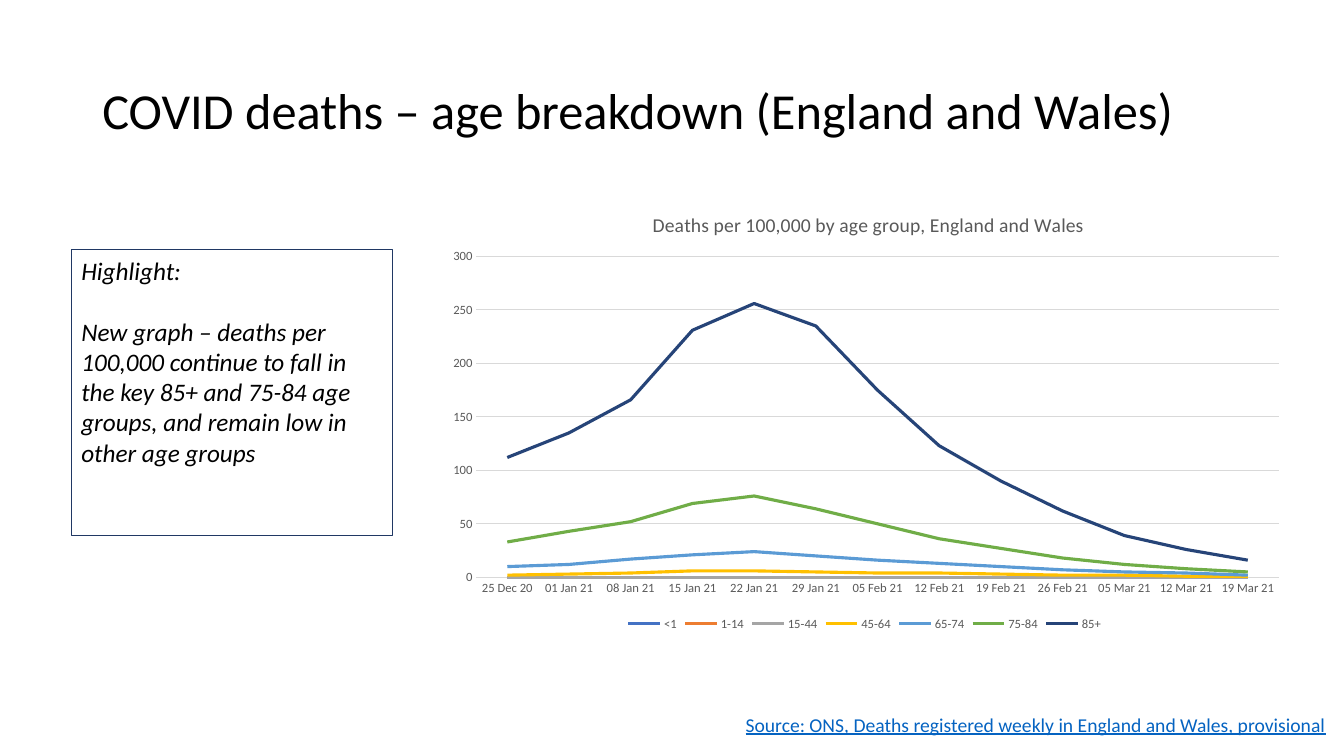
"""Build a slide on COVID deaths by age group with a line chart."""
from lxml import etree
from pptx import Presentation
from pptx import util as u
from pptx.chart.data import CategoryChartData
from pptx.dml.color import RGBColor
from pptx.enum import chart as ch, shapes, text
from pptx.oxml import parse_xml
from pptx.oxml.ns import nsdecls, qn

BLACK = RGBColor(0x00, 0x00, 0x00)
NAVY = RGBColor(0x20, 0x38, 0x64)
LINK = RGBColor(0x05, 0x63, 0xC1)
GREY = RGBColor(0x59, 0x59, 0x59)
PALE = RGBColor(0xD9, 0xD9, 0xD9)

WEEKS = ["25 Dec 20", "01 Jan 21", "08 Jan 21", "15 Jan 21", "22 Jan 21",
         "29 Jan 21", "05 Feb 21", "12 Feb 21", "19 Feb 21", "26 Feb 21",
         "05 Mar 21", "12 Mar 21", "19 Mar 21"]
AGE_GROUPS = [
    ("<1", RGBColor(0x44, 0x72, 0xC4), [0] * len(WEEKS)),
    ("1-14", RGBColor(0xED, 0x7D, 0x31), [0] * len(WEEKS)),
    ("15-44", RGBColor(0xA5, 0xA5, 0xA5), [0] * len(WEEKS)),
    ("45-64", RGBColor(0xFF, 0xC0, 0x00),
     [2, 3, 4, 6, 6, 5, 4, 4, 3, 2, 2, 1, 1]),
    ("65-74", RGBColor(0x5B, 0x9B, 0xD5),
     [10, 12, 17, 21, 24, 20, 16, 13, 10, 7, 5, 4, 2]),
    ("75-84", RGBColor(0x70, 0xAD, 0x47),
     [33, 43, 52, 69, 76, 64, 50, 36, 27, 18, 12, 8, 5]),
    ("85+", RGBColor(0x26, 0x44, 0x78),
     [112, 135, 166, 231, 256, 235, 175, 123, 90, 62, 39, 26, 16]),
]


class Deck:
    """Hold the style and the current slide."""

    def __init__(self, font="Calibri"):
        self.font = font
        self.prs = Presentation()
        self.prs.slide_width, self.prs.slide_height = u.Cm(33.87), u.Cm(19.05)
        self.s = self.prs.slides.add_slide(self.prs.slide_layouts[6])

    def style(self, font, size, color, italic=None, underline=None):
        """Set the look of a font."""
        font.name, font.size = self.font, u.Pt(size)
        font.color.rgb = color
        font.italic, font.underline = italic, underline

    def fill_text(self, tf, paragraphs, size, color, gap=0, wrap=True, **look):
        """Fill a text frame, with a gap between paragraphs."""
        tf.word_wrap = wrap
        for i, words in enumerate(paragraphs):
            p = tf.add_paragraph() if i else tf.paragraphs[0]
            p.text = words
            p.alignment = text.PP_ALIGN.LEFT
            if i:
                p.space_before = u.Pt(gap)
            self.style(p.font, size, color, **look)

    def label(self, words, box, size, color, **look):
        """Add a text box of one paragraph."""
        sp = self.s.shapes.add_textbox(*map(u.Cm, box))
        self.fill_text(sp.text_frame, [words], size, color, **look)
        return sp.text_frame

    def panel(self, paragraphs, box, size, line, gap):
        """Add an outlined box of italic text."""
        sp = self.s.shapes.add_shape(shapes.MSO_SHAPE.RECTANGLE, *map(u.Cm, box))
        sp.shadow.inherit = False
        sp.fill.background()
        sp.line.color.rgb, sp.line.width = line, u.Pt(0.75)
        sp.text_frame.vertical_anchor = text.MSO_ANCHOR.TOP
        self.fill_text(sp.text_frame, paragraphs, size, BLACK, gap=gap, italic=True)

    def place(self, element, index, **fractions):
        """Give a chart part a fixed place, as fractions of the chart."""
        for old in element.findall(qn("c:layout")):
            element.remove(old)
        layout = parse_xml(f"<c:layout {nsdecls('c')}><c:manualLayout/></c:layout>")
        if "w" in fractions:
            etree.SubElement(layout[0], qn("c:layoutTarget")).set("val", "inner")
        for side in "xy":
            etree.SubElement(layout[0], qn(f"c:{side}Mode")).set("val", "edge")
        for name, value in fractions.items():
            etree.SubElement(layout[0], qn(f"c:{name}")).set("val", str(value))
        element.insert(index, layout)

    def line_chart(self, title, cats, groups, box):
        """Add a line chart with a title and a legend below."""
        data = CategoryChartData()
        data.categories = cats
        for name, _, values in groups:
            data.add_series(name, values)
        chart = self.s.shapes.add_chart(
            ch.XL_CHART_TYPE.LINE, *map(u.Cm, box), data).chart
        self.style(chart.font, 10, BLACK)

        for series, (_, color, _) in zip(chart.plots[0].series, groups):
            series.smooth = False
            series.marker.style = ch.XL_MARKER_STYLE.NONE
            series.format.line.color.rgb = color
            series.format.line.width = u.Pt(2.25)
        chart.plots[0].vary_by_categories = False

        weeks, rates = chart.category_axis, chart.value_axis
        for axis in (weeks, rates):
            axis.major_tick_mark = axis.minor_tick_mark = ch.XL_TICK_MARK.NONE
            self.style(axis.tick_labels.font, 9, GREY)
        rates.minimum_scale, rates.maximum_scale, rates.major_unit = 0, 300, 50
        rates.format.line.fill.background()
        for line in (weeks.format.line, rates.major_gridlines.format.line):
            line.color.rgb, line.width = PALE, u.Pt(0.75)

        chart.has_legend = True
        chart.legend.position = ch.XL_LEGEND_POSITION.BOTTOM
        chart.legend.include_in_layout = False
        self.style(chart.legend.font, 9, GREY)

        chart.has_title = True
        p = chart.chart_title.text_frame.paragraphs[0]
        p.text = title
        self.style(p.font, 14, GREY)
        p.font.bold = False
        root = chart.element
        self.place(root.find(".//" + qn("c:title")), 1, x=0.25, y=0.04)
        self.place(root.find(".//" + qn("c:plotArea")), 0,
                   x=0.05, y=0.15, w=0.93, h=0.72)


def main():
    """Build and save the slide."""
    deck = Deck()
    tf = deck.label("COVID deaths – age breakdown (England and Wales)",
                    (2.33, 1.02, 29.21, 3.68), 36, BLACK)
    tf.vertical_anchor = text.MSO_ANCHOR.MIDDLE
    tf.paragraphs[0].line_spacing = 0.9
    deck.panel(["Highlight:",
                "New graph – deaths per 100,000 continue to fall in the key 85+ "
                "and 75-84 age groups, and remain low in other age groups"],
               (1.8, 6.3, 8.1, 7.19), 18, NAVY, gap=22)
    deck.label("Source: ONS, Deaths registered weekly in England and Wales, provisional",
               (18.54, 17.83, 15.29, 0.86), 14, LINK, wrap=False, underline=True)
    deck.line_chart("Deaths per 100,000 by age group, England and Wales",
                    WEEKS, AGE_GROUPS, (10.92, 4.78, 21.74, 11.23))
    deck.prs.save("out.pptx")


if __name__ == "__main__":
    main()
